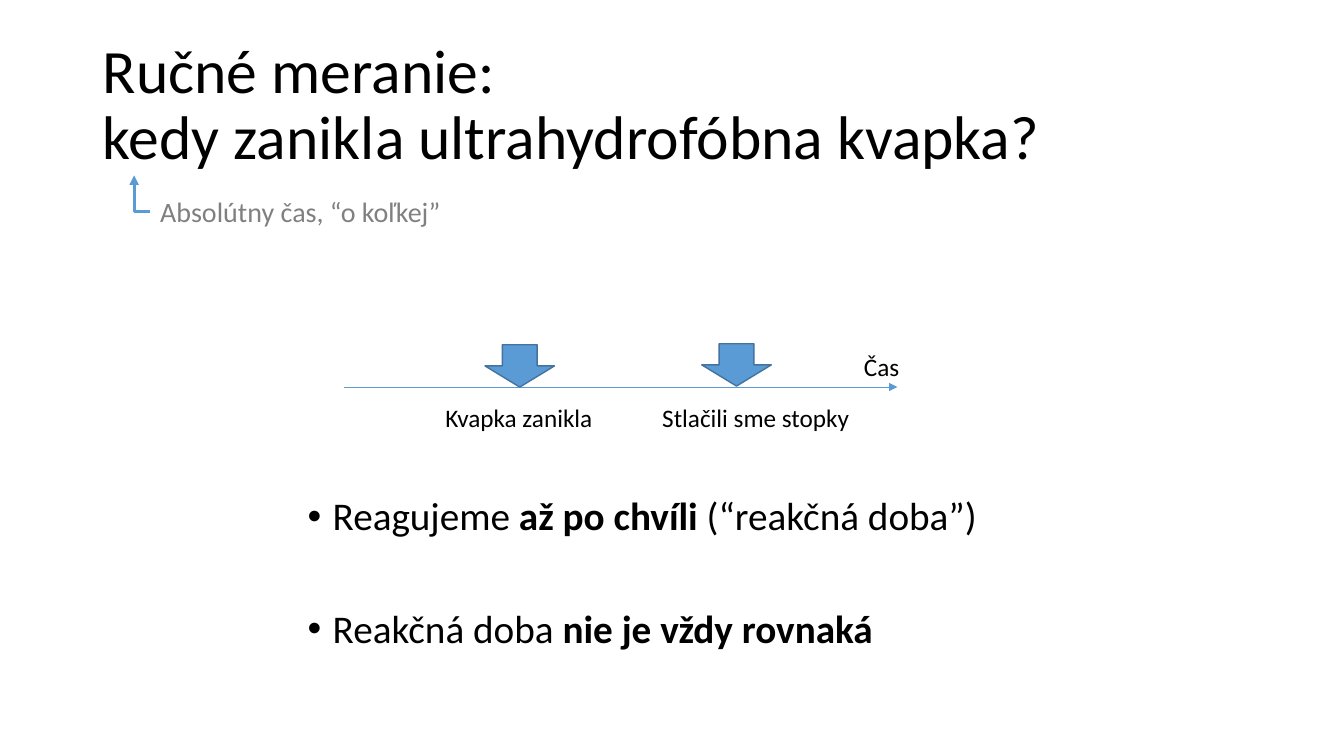
import pptx
import pptx.util
import pptx.dml.color
import pptx.enum.shapes
import pptx.enum.text
import pptx.oxml.ns
import pptx.oxml.xmlchemy

PX = 9144  # EMU in one px, 100 px to the inch
COLORS = {"ink": "000000", "gray": "808080", "blue": "5B9BD5", "edge": "43739E"}
KIND = pptx.enum.shapes.MSO_CONNECTOR
FIT = pptx.enum.text.MSO_AUTO_SIZE
LEFT = pptx.enum.text.PP_ALIGN.LEFT
MIDDLE = pptx.enum.text.MSO_ANCHOR.MIDDLE
qn = pptx.oxml.ns.qn
make = pptx.oxml.xmlchemy.OxmlElement


def rgb(name):
    return pptx.dml.color.RGBColor.from_string(COLORS[name])


def assign(obj, values):
    for key, value in values.items():
        setattr(obj, key, value)


class Deck:
    font = "Calibri"

    def __init__(self, wide, high):
        self.prs = pptx.Presentation()
        assign(self.prs, {"slide_width": wide * PX, "slide_height": high * PX})
        self.slide = self.prs.slides.add_slide(self.prs.slide_layouts[1])
        self.shapes = self.slide.shapes

    def place(self, shape, box):
        keys = ("left", "top", "width", "height")
        assign(shape, {key: px * PX for key, px in zip(keys, box)})

    def style(self, font, size, color):
        assign(font, {"name": self.font, "size": pptx.util.Pt(size)})
        font.color.rgb = rgb(color)

    def title(self, box, lines):
        shape = self.shapes.title
        self.place(shape, box)
        assign(shape.text_frame, {"auto_size": FIT.NONE, "vertical_anchor": MIDDLE})
        para = shape.text_frame.paragraphs[0]
        assign(para, {"alignment": LEFT, "line_spacing": 0.9})
        for pos, line in enumerate(lines):
            if pos:
                para.add_line_break()
            run = para.add_run()
            run.text = line
            self.style(run.font, 44, "ink")

    def bullets(self, box, items, gap):
        shape = self.slide.placeholders[1]
        self.place(shape, box)
        frame = shape.text_frame
        frame.auto_size = FIT.NONE
        for pos, item in enumerate(items):
            para = frame.add_paragraph() if pos else frame.paragraphs[0]
            props = para._p.get_or_add_pPr()
            props.set("marL", str(25 * PX))
            props.set("indent", str(-25 * PX))
            space = pptx.util.Pt(gap if pos else 0)
            assign(para, {"line_spacing": 0.9, "space_before": space})
            for text, bold in item:
                run = para.add_run()
                run.text = text
                run.font.bold = bold
                self.style(run.font, 28, "ink")

    def label(self, box, text, size=18, color="ink", wrap=False):
        shape = self.shapes.add_textbox(*(px * PX for px in box))
        frame = shape.text_frame
        assign(frame, {"word_wrap": wrap, "auto_size": FIT.SHAPE_TO_FIT_TEXT})
        run = frame.paragraphs[0].add_run()
        run.text = text
        self.style(run.font, size, color)

    def arrow(self, ends, width, kind=KIND.STRAIGHT):
        line = self.shapes.add_connector(kind, *(px * PX for px in ends))
        line.line.color.rgb = rgb("blue")
        line.line.width = pptx.util.Pt(width)
        props = line.element.spPr
        tail = make("a:tailEnd")
        tail.set("type", "triangle")
        props.find(qn("a:ln")).append(tail)
        props.append(make("a:effectLst"))
        return props

    def elbow(self, ends, width):
        # One bend, turned half round: from lower right to upper left
        props = self.arrow(ends, width, KIND.ELBOW)
        props.find(qn("a:xfrm")).set("rot", "10800000")
        props.find(qn("a:prstGeom")).set("prst", "bentConnector2")

    def marker(self, box):
        kind = pptx.enum.shapes.MSO_SHAPE.DOWN_ARROW
        shape = self.shapes.add_shape(kind, *(px * PX for px in box))
        shape.shadow.inherit = False
        shape.fill.solid()
        shape.fill.fore_color.rgb = rgb("blue")
        shape.line.color.rgb = rgb("edge")
        shape.line.width = pptx.util.Pt(1)


def main():
    deck = Deck(1333, 750)

    # Title and list
    deck.title((92, 33, 1150, 145),
               ["Ručné meranie:", "kedy zanikla ultrahydrofóbna kvapka?"])
    deck.bullets((295, 488, 700, 262), [
        [("Reagujeme ", False), ("až po chvíli ", True), ("(“reakčná doba”)", False)],
        [("Reakčná doba ", False), ("nie je vždy rovnaká", True)],
    ], gap=50)

    # Note on the title
    deck.label((149, 188, 325, 44), "Absolútny čas, “o koľkej”", 20, "gray", True)
    deck.elbow((133, 174, 149, 210), 2.25)

    # Time axis with its events
    deck.arrow((341, 384, 890, 384), 0.5)
    deck.label((847, 344, 56, 40), "Čas")
    events = [(432, 167, 342, "Kvapka zanikla"), (647, 207, 341, "Stlačili sme stopky")]
    for left, wide, top, text in events:
        deck.label((left, 394, wide, 40), text)
        deck.marker((left + 49, top, 69, 42))

    deck.prs.save("out.pptx")


if __name__ == "__main__":
    main()
